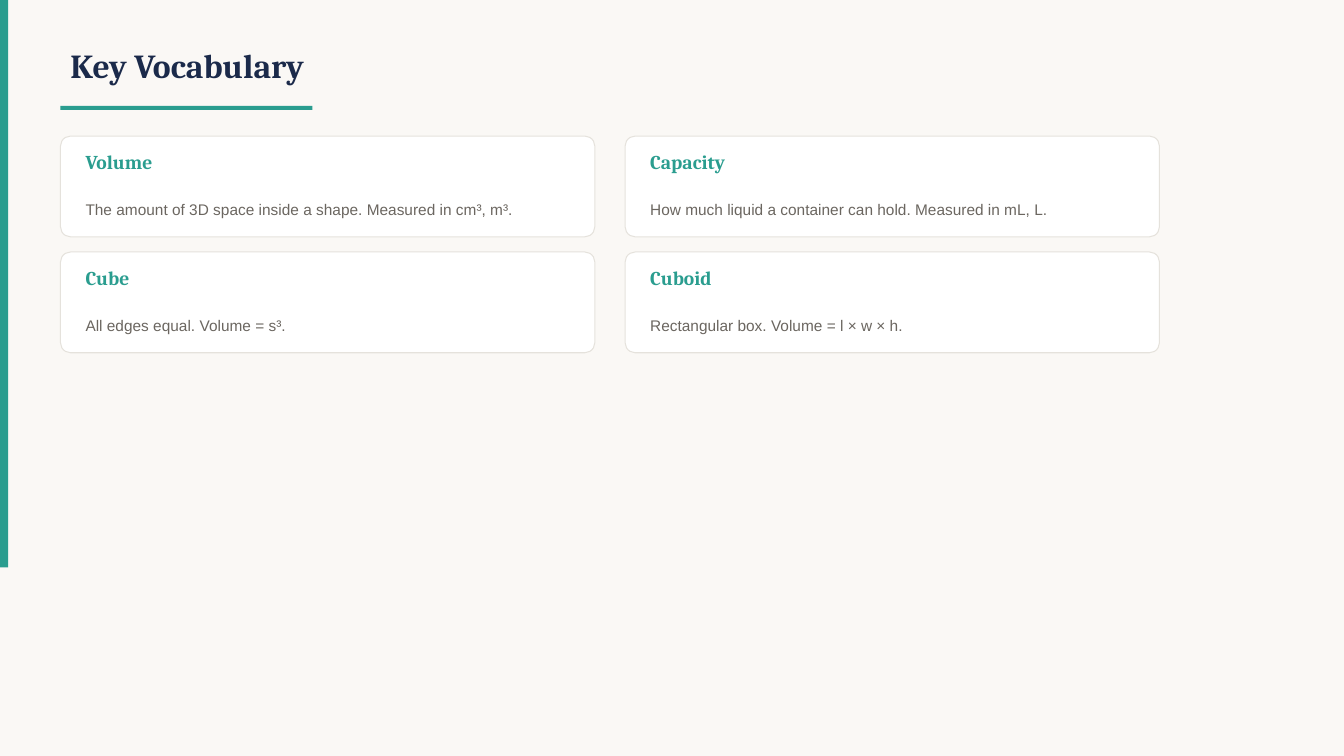
"""Build the Key Vocabulary slide: a heading above a two-column grid of term cards."""
import pptx
import pptx.dml.color
import pptx.enum.shapes
import pptx.enum.text
import pptx.util

TEAL, NAVY, GREY = "2A9D8F", "1B2A4A", "6B6660"
PAPER, WHITE, BORDER = "FAF8F5", "FFFFFF", "E5E2DC"
LEFT, TOP = 0.6, 1.35
CARD_W, CARD_H = 5.3, 1
GAP_X, GAP_Y = 0.3, 0.15
INSET = 0.15
COLUMNS = 2
TERMS = [
    ("Volume", "The amount of 3D space inside a shape. Measured in cm³, m³."),
    ("Capacity", "How much liquid a container can hold. Measured in mL, L."),
    ("Cube", "All edges equal. Volume = s³."),
    ("Cuboid", "Rectangular box. Volume = l × w × h."),
]


def rgb(value):
    return pptx.dml.color.RGBColor.from_string(value)


def box(*lengths):
    return [pptx.util.Inches(n) for n in lengths]


def add_block(s, x, y, w, h, fill, line=None, radius=None):
    kinds = pptx.enum.shapes.MSO_SHAPE
    kind = kinds.ROUNDED_RECTANGLE if radius else kinds.RECTANGLE
    sp = s.shapes.add_shape(kind, *box(x, y, w, h))
    sp.shadow.inherit = False
    sp.fill.solid()
    sp.fill.fore_color.rgb = rgb(fill)
    if radius:
        sp.adjustments[0] = radius
    if line:
        sp.line.color.rgb = rgb(line)
        sp.line.width = pptx.util.Pt(0.75)
    else:
        sp.line.fill.background()


def add_text(s, x, y, w, h, text, size, font, color, bold=False, spacing=None):
    tf = s.shapes.add_textbox(*box(x, y, w, h)).text_frame
    tf.word_wrap = True
    tf.vertical_anchor = pptx.enum.text.MSO_ANCHOR.MIDDLE
    p = tf.paragraphs[0]
    p.text = text
    p.line_spacing = spacing
    r = p.runs[0]
    r.font.size = pptx.util.Pt(size)
    r.font.name = font
    r.font.bold = bold
    r.font.color.rgb = rgb(color)


def add_heading(s, text):
    add_text(s, LEFT, 0.3, 10, 0.7, text, 24, "Cambria", NAVY, bold=True)
    add_block(s, LEFT, 1.05, 2.5, 0.04, TEAL)


def add_card(s, index, term, meaning):
    row, column = divmod(index, COLUMNS)
    x = LEFT + column * (CARD_W + GAP_X)
    y = TOP + row * (CARD_H + GAP_Y)
    w = CARD_W - 2 * INSET
    add_block(s, x, y, CARD_W, CARD_H, WHITE, line=BORDER, radius=0.1)
    add_text(s, x + INSET, y + 0.08, w, 0.35, term, 14, "Cambria", TEAL, bold=True)
    add_text(s, x + INSET, y + 0.45, w, 0.5, meaning, 11, "Arial", GREY, spacing=1.3)


def main():
    prs = pptx.Presentation()
    prs.slide_width, prs.slide_height = box(13.33, 7.5)
    s = prs.slides.add_slide(prs.slide_layouts[6])
    s.background.fill.solid()
    s.background.fill.fore_color.rgb = rgb(PAPER)
    add_block(s, 0, 0, 0.08, 5.63, TEAL)
    add_heading(s, "Key Vocabulary")
    for index, (term, meaning) in enumerate(TERMS):
        add_card(s, index, term, meaning)
    prs.save("out.pptx")


if __name__ == "__main__":
    main()
